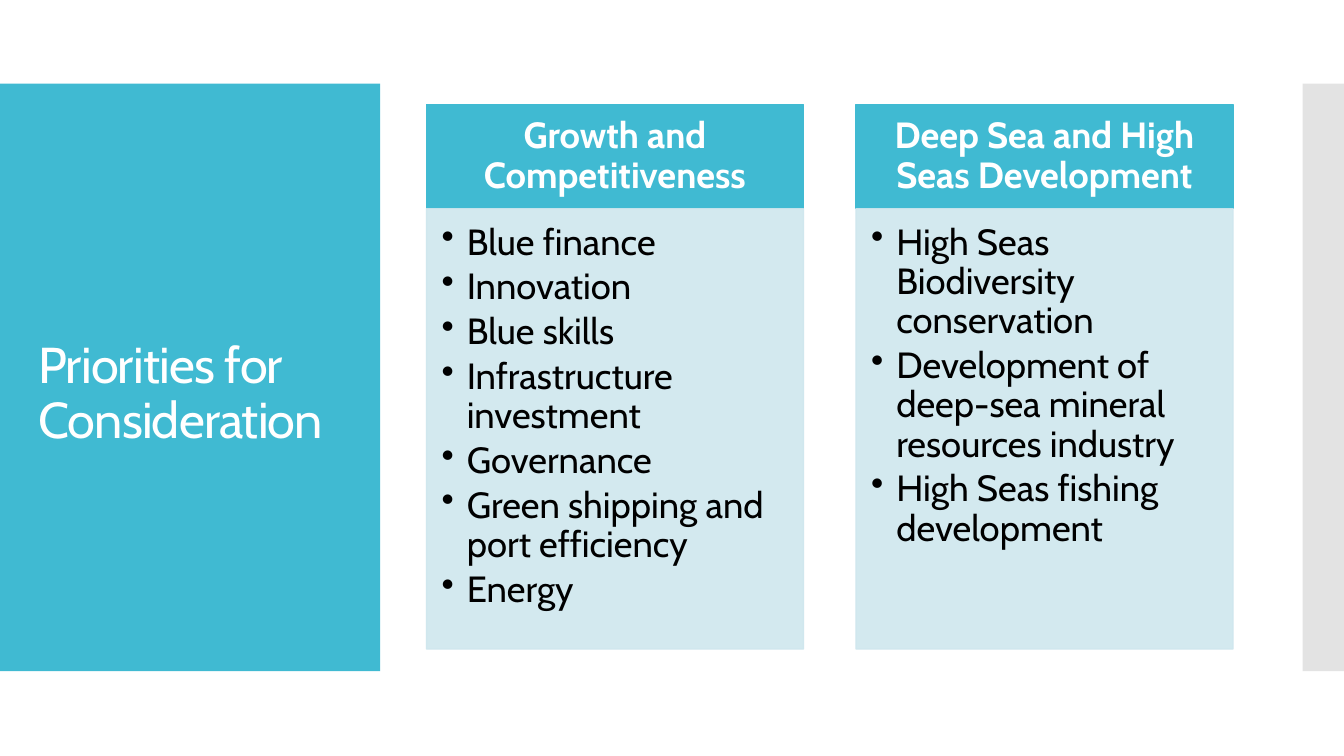
"""Build the slide on priorities for consideration."""
from lxml import etree
from pptx import Presentation
from pptx.dml.color import RGBColor
from pptx.enum.shapes import MSO_SHAPE
from pptx.enum.text import MSO_ANCHOR, MSO_AUTO_SIZE, PP_ALIGN
from pptx.oxml.ns import qn
from pptx.util import Inches, Pt

TITLE = "Priorities for Consideration"
COLUMNS = [
    ("Growth and Competitiveness", [
        "Blue finance",
        "Innovation",
        "Blue skills",
        "Infrastructure investment",
        "Governance",
        "Green shipping and port efficiency",
        "Energy",
    ]),
    ("Deep Sea and High Seas Development", [
        "High Seas Biodiversity conservation",
        "Development of deep-sea mineral resources industry",
        "High Seas fishing development",
    ]),
]
FONT = "Cabin"
TEAL, PALE, GREY, WHITE, BLACK = "40BAD2", "CFE7EE", "C8C8C8", "FFFFFF", "000000"
BAND_TOP, BAND_H = 0.83, 5.83
COL_X, COL_STEP, COL_W = 4.23, 4.26, 3.74
HEAD_Y, HEAD_H, BODY_H = 1.04, 1.03, 4.37
HEAD_INSETS = (0.2, 0.12, 0.2, 0.12)
BODY_INSETS = (0.15, 0.15, 0.2, 0.23)


def paint(fmt, color, opacity=100):
    fmt.solid()
    fmt.fore_color.rgb = RGBColor.from_string(color)
    if opacity < 100:
        for clr in fmt._xPr.iter(qn("a:srgbClr")):
            etree.SubElement(clr, qn("a:alpha"), val=str(opacity * 1000))


def add_rect(s, box, color, opacity=100, outlined=False):
    sp = s.shapes.add_shape(MSO_SHAPE.RECTANGLE, *map(Inches, box))
    sp.shadow.inherit = False
    paint(sp.fill, color, opacity)
    if outlined:
        sp.line.width = Pt(0.85)
        paint(sp.line.fill, color, opacity)
    else:
        sp.line.fill.background()
    return sp


def set_frame(tf, insets, anchor):
    tf.word_wrap = True
    tf.auto_size = MSO_AUTO_SIZE.NONE
    tf.vertical_anchor = anchor
    (tf.margin_left, tf.margin_top,
     tf.margin_right, tf.margin_bottom) = map(Inches, insets)


def write(p, text, size, color, align=PP_ALIGN.LEFT, bold=False, after=0):
    p.alignment = align
    p.line_spacing = 0.9
    p.space_after = Pt(after)
    r = p.add_run()
    r.text = text
    r.font.name = FONT
    r.font.size = Pt(size)
    r.font.bold = bold
    r.font.color.rgb = RGBColor.from_string(color)
    return r


def add_bullet(p):
    pPr = p._p.get_or_add_pPr()
    pPr.set("marL", str(Inches(0.25)))
    pPr.set("indent", str(-Inches(0.25)))
    etree.SubElement(pPr, qn("a:buChar"), char="•")


def add_column(s, x, heading, items):
    head = add_rect(s, (x, HEAD_Y, COL_W, HEAD_H), TEAL, outlined=True)
    set_frame(head.text_frame, HEAD_INSETS, MSO_ANCHOR.MIDDLE)
    write(head.text_frame.paragraphs[0], heading, 26, WHITE, PP_ALIGN.CENTER, True)

    body = add_rect(s, (x, HEAD_Y + HEAD_H, COL_W, BODY_H), PALE, 90, True)
    tf = body.text_frame
    set_frame(tf, BODY_INSETS, MSO_ANCHOR.TOP)
    for i, item in enumerate(items):
        p = tf.add_paragraph() if i else tf.paragraphs[0]
        write(p, item, 26, BLACK, after=3.9)
        add_bullet(p)


def add_title(s):
    title = s.shapes.title
    title.left, title.top, title.width, title.height = map(
        Inches, (0.28, 1.57, 3.22, 4.69))
    set_frame(title.text_frame, (0.1, 0.05, 0.1, 0.05), MSO_ANCHOR.MIDDLE)
    r = write(title.text_frame.paragraphs[0], TITLE, 36, WHITE)
    r._r.get_or_add_rPr().set("spc", "-60")
    s.shapes._spTree.append(title._element)


def main():
    prs = Presentation()
    prs.slide_width, prs.slide_height = Inches(13.33), Inches(7.5)
    s = prs.slides.add_slide(prs.slide_layouts[5])
    add_rect(s, (0, BAND_TOP, 3.77, BAND_H), TEAL)
    add_rect(s, (12.92, BAND_TOP, 0.41, BAND_H), GREY, 50)
    add_title(s)
    for i, (heading, items) in enumerate(COLUMNS):
        add_column(s, COL_X + i * COL_STEP, heading, items)
    prs.save("out.pptx")


if __name__ == "__main__":
    main()
